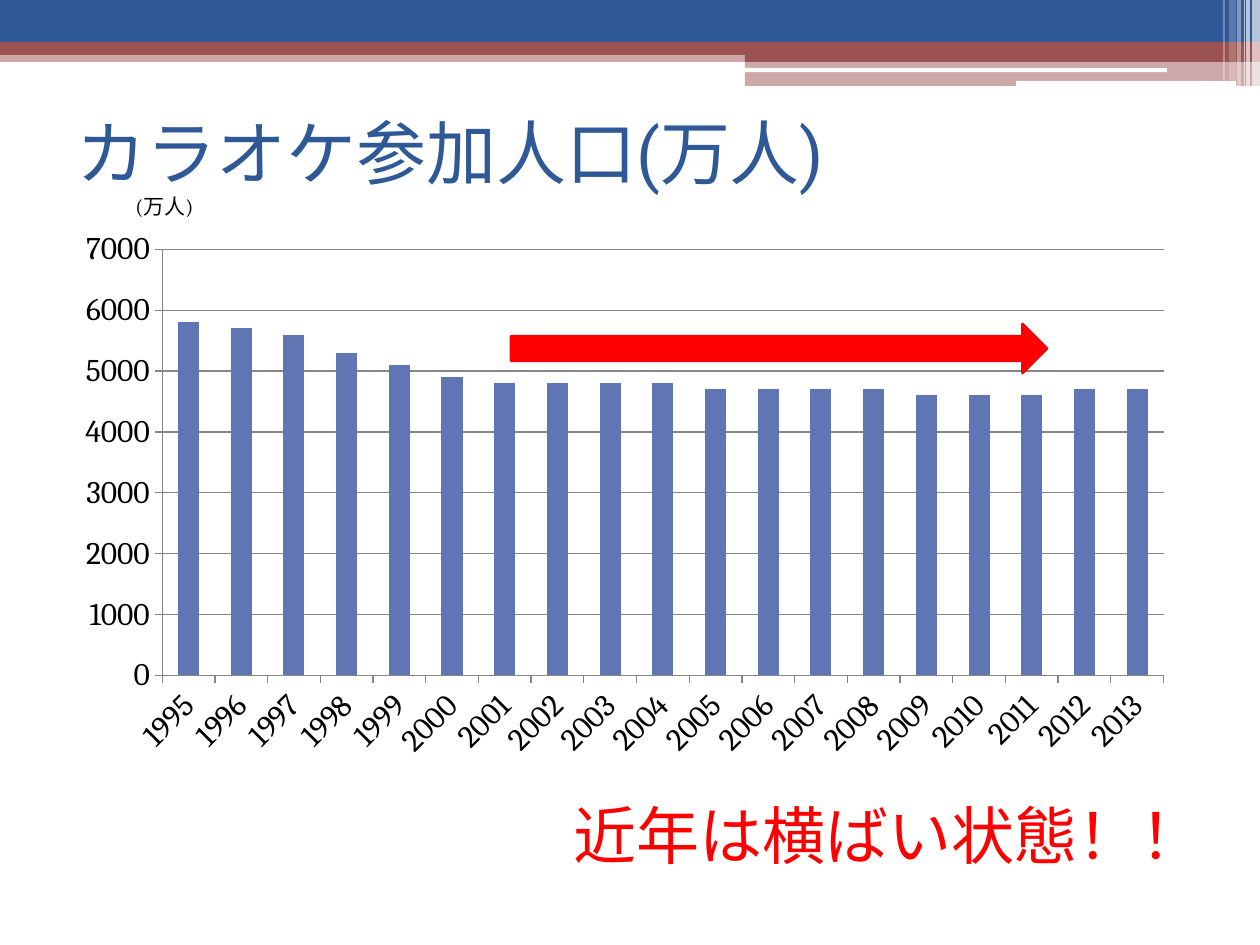
from lxml.etree import SubElement
from pptx import Presentation
from pptx.chart.data import CategoryChartData
from pptx.dml.color import RGBColor
from pptx.enum.chart import XL_CHART_TYPE, XL_TICK_MARK
from pptx.enum.shapes import MSO_SHAPE
from pptx.enum.text import MSO_ANCHOR, PP_ALIGN
from pptx.oxml.ns import qn
from pptx.util import Emu, Pt

EMU_PER_PX = 914400 / 126
COLORS = {
    "blue": "2F5897", "brick": "9C5252", "white": "FFFFFF", "bar": "6076B4",
    "red": "FF0000", "black": "000000", "grid": "868686",
}
LATIN, JAPANESE, TITLE = "Cambria", "Noto Sans CJK JP", "Roboto"

# Header bands: left, top, width, height, colour, opacity in percent
BANDS = [
    (0, 50, 1260, 12, "brick", 50),
    (0, 0, 1260, 43, "blue", 100),
    (0, 42, 1260, 13, "brick", 100),
    (745, 49, 515, 13, "brick", 100),
    (745, 61, 515, 25, "brick", 50),
]
ROUNDED_GAPS = [(745, 68, 422, 4), (1016, 81, 220, 5)]
# Stripes at the right edge: left, width, height, opacity in percent
STRIPES = [
    (1252, 8, 86, 65), (1246, 4, 86, 65), (1244, 1, 86, 60),
    (1237, 4, 86, 40), (1229, 7, 81, 20), (1223, 2, 81, 30),
]
YEARS = range(1995, 2014)
SINGERS = [5800, 5700, 5600, 5300, 5100, 4900, 4800, 4800, 4800, 4800,
           4700, 4700, 4700, 4700, 4600, 4600, 4600, 4700, 4700]


def px(*lengths):
    return [Emu(round(length * EMU_PER_PX)) for length in lengths]


def rgb(name):
    return RGBColor.from_string(COLORS[name])


def add_block(slide, box, color, opacity=100, preset=MSO_SHAPE.RECTANGLE):
    block = slide.shapes.add_shape(preset, *px(*box))
    block.shadow.inherit = False
    block.line.fill.background()
    block.fill.solid()
    block.fill.fore_color.rgb = rgb(color)
    if opacity < 100:
        solid_color = block.fill._xPr.find(qn("a:solidFill"))[0]
        SubElement(solid_color, qn("a:alpha"), val=str(opacity * 1000))
    return block


def write(frame, text, size, font, color):
    frame.word_wrap = True
    paragraph = frame.paragraphs[0]
    paragraph.alignment = PP_ALIGN.LEFT
    run = paragraph.add_run()
    run.text = text
    run.font.size = Pt(size)
    run.font.name = font
    run.font.color.rgb = rgb(color)


def add_label(slide, box, *text_style):
    label = slide.shapes.add_textbox(*px(*box))
    write(label.text_frame, *text_style)


def set_title(slide, box, *text_style):
    title = slide.shapes.title
    title.left, title.top, title.width, title.height = px(*box)
    title.text_frame.vertical_anchor = MSO_ANCHOR.MIDDLE
    write(title.text_frame, *text_style)


def add_header(slide):
    for *box, color, opacity in BANDS:
        add_block(slide, box, color, opacity)
    for box in ROUNDED_GAPS:
        add_block(slide, box, "white", preset=MSO_SHAPE.ROUNDED_RECTANGLE)
    for left, width, height, opacity in STRIPES:
        add_block(slide, (left, 0, width, height), "white", opacity)


def add_column_chart(slide, box):
    data = CategoryChartData()
    data.categories = [str(year) for year in YEARS]
    data.add_series("Series 1", SINGERS)
    chart = slide.shapes.add_chart(
        XL_CHART_TYPE.COLUMN_CLUSTERED, *px(*box), data).chart
    chart.has_legend = False
    chart.has_title = False
    chart.font.size = Pt(18)
    chart.font.name = LATIN
    chart.font.color.rgb = rgb("black")

    plot = chart.plots[0]
    plot.gap_width = 150
    plot.vary_by_categories = False
    columns = plot.series[0].format.fill
    columns.solid()
    columns.fore_color.rgb = rgb("bar")

    years, singers = chart.category_axis, chart.value_axis
    singers.minimum_scale, singers.maximum_scale = 0, 7000
    singers.major_unit = 1000
    singers.has_major_gridlines = True
    for axis in (years, singers):
        axis.major_tick_mark = XL_TICK_MARK.OUTSIDE
        axis.minor_tick_mark = XL_TICK_MARK.NONE
    for ruled in (years, singers, singers.major_gridlines):
        ruled.format.line.color.rgb = rgb("grid")
        ruled.format.line.width = Pt(0.75)


def add_trend_arrow(slide, box):
    arrow = add_block(slide, box, "red", preset=MSO_SHAPE.RIGHT_ARROW)
    arrow.line.color.rgb = rgb("red")
    arrow.line.width = Pt(1.5)


def main():
    deck = Presentation()
    deck.slide_width, deck.slide_height = px(1260, 945)
    slide = deck.slides.add_slide(deck.slide_layouts[5])

    add_header(slide)
    set_title(slide, (64, 78, 1134, 147),
              "カラオケ参加人口(万人)", 40, TITLE, "blue")
    add_column_chart(slide, (63, 220, 1123, 550))
    add_trend_arrow(slide, (511, 324, 536, 49))

    # Conclusion and axis unit
    add_label(slide, (561, 790, 665, 89),
              "近年は横ばい状態！！", 36, JAPANESE, "red")
    add_label(slide, (123, 187, 139, 38), "(万人)", 12, LATIN, "black")
    deck.save("out.pptx")


if __name__ == "__main__":
    main()
